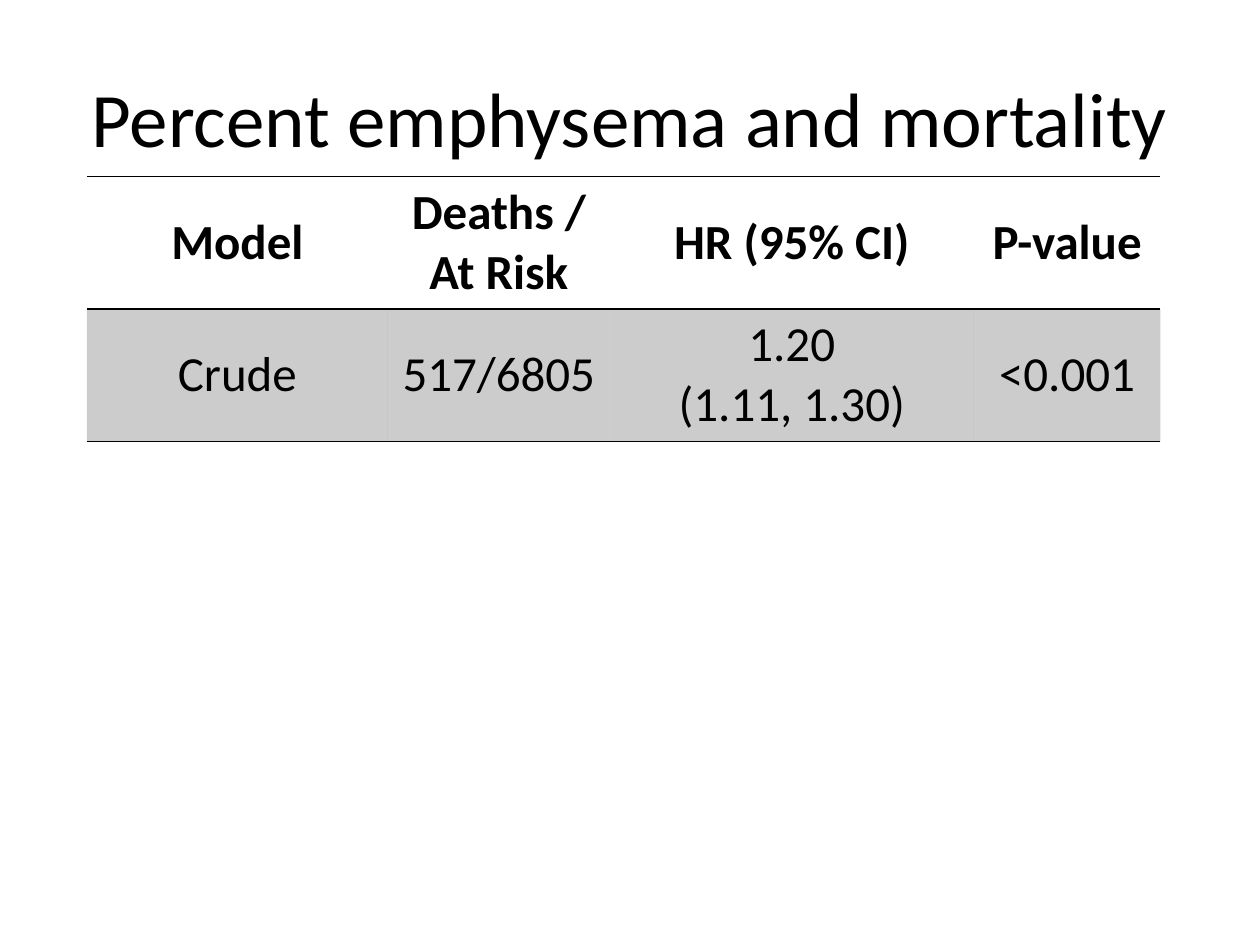
from dataclasses import dataclass

from lxml.etree import SubElement
from pptx import Presentation
from pptx.dml.color import RGBColor
from pptx.enum.text import MSO_ANCHOR as Anchor, PP_ALIGN as Align
from pptx.oxml import parse_xml
from pptx.oxml.ns import nsdecls, qn
from pptx.util import Cm, Pt


@dataclass(frozen=True)
class Theme:
    font: str = "Calibri"
    ink: str = "000000"
    title_size: int = 44
    table_size: int = 28
    rule_width: int = 1
    band_opacity: int = 20


THEME = Theme()
PLAIN_TABLE_STYLE = "{2D5ABB26-0587-4C30-8999-92F81FD0307C}"
COLUMN_WIDTHS = (6.07, 4.47, 7.34, 3.76)
ROW_HEIGHT = 2.66
ROWS = (
    ("Model", "Deaths / At Risk", "HR (95% CI)", "P-value"),
    ("Crude", "517/6805", "1.20\n(1.11, 1.30)", "<0.001"),
)


def write_text(frame, text, size, bold=False):
    """Write centred paragraphs, one for each line of text."""
    frame.text = text
    font_format = {"name": THEME.font, "size": Pt(size), "bold": bold}
    for paragraph in frame.paragraphs:
        paragraph.alignment = Align.CENTER
        for run in paragraph.runs:
            for name, value in font_format.items():
                setattr(run.font, name, value)
            run.font.color.rgb = RGBColor.from_string(THEME.ink)


def fill_band(cell):
    """Tint a cell with the ink colour, mostly transparent."""
    cell.fill.solid()
    cell.fill.fore_color.rgb = RGBColor.from_string(THEME.ink)
    color = cell._tc.tcPr.find(f".//{qn('a:srgbClr')}")
    SubElement(color, qn("a:alpha"), val=str(THEME.band_opacity * 1000))


def add_rules(cell):
    """Draw lines along the top and bottom of a cell."""
    for position, side in enumerate(("lnT", "lnB")):
        rule = parse_xml(
            f'<a:{side} {nsdecls("a")} w="{Pt(THEME.rule_width)}"><a:solidFill>'
            f'<a:srgbClr val="{THEME.ink}"/></a:solidFill></a:{side}>'
        )
        cell._tc.tcPr.insert(position, rule)


def add_title(slide, text):
    title = slide.shapes.title
    place = {"left": 1.27, "top": 0.76, "width": 22.86, "height": 3.18}
    for name, value in place.items():
        setattr(title, name, Cm(value))
    title.text_frame.vertical_anchor = Anchor.MIDDLE
    write_text(title.text_frame, text, THEME.title_size)


def add_results_table(slide):
    frame = slide.shapes.add_table(
        len(ROWS), len(COLUMN_WIDTHS), Cm(1.75), Cm(3.56),
        Cm(sum(COLUMN_WIDTHS)), Cm(ROW_HEIGHT * len(ROWS)),
    )
    table = frame.table
    table.horz_banding = False
    table._tbl.tblPr.find(qn("a:tableStyleId")).text = PLAIN_TABLE_STYLE
    for column, width in zip(table.columns, COLUMN_WIDTHS):
        column.width = Cm(width)
    for row, texts in zip(table.rows, ROWS):
        is_header = texts is ROWS[0]
        row.height = Cm(ROW_HEIGHT)
        for cell, text in zip(row.cells, texts):
            write_text(cell.text_frame, text, THEME.table_size, bold=is_header)
            cell.vertical_anchor = Anchor.MIDDLE
            if is_header:
                cell.fill.background()
            else:
                fill_band(cell)
            add_rules(cell)


def main():
    presentation = Presentation()
    presentation.slide_width, presentation.slide_height = Cm(25.4), Cm(19.05)
    slide = presentation.slides.add_slide(presentation.slide_layouts[5])
    add_title(slide, "Percent emphysema and mortality")
    add_results_table(slide)
    presentation.save("out.pptx")


if __name__ == "__main__":
    main()
